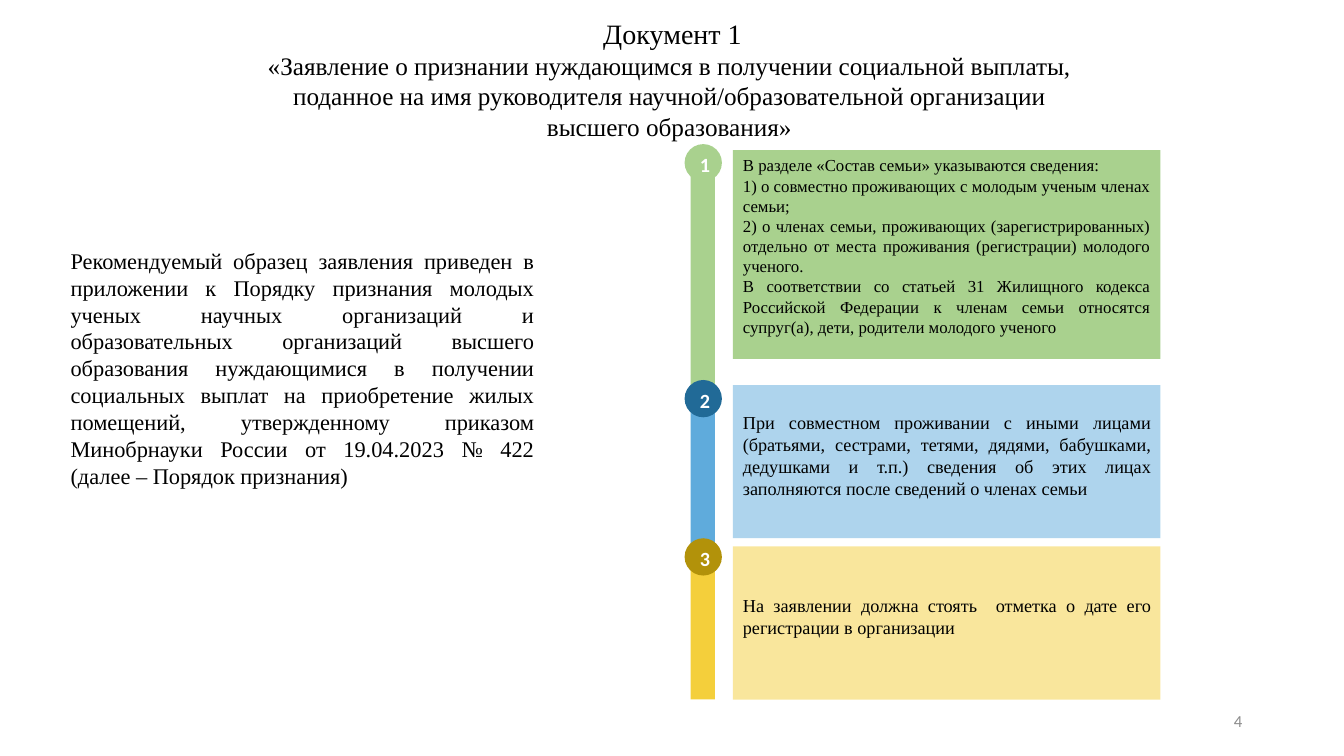
import pptx
import pptx.util
import pptx.dml.color
import pptx.enum.shapes
import pptx.enum.text
import pptx.oxml.ns
import lxml.etree

RGBColor = pptx.dml.color.RGBColor
Shape = pptx.enum.shapes.MSO_SHAPE
Align = pptx.enum.text.PP_ALIGN
Anchor = pptx.enum.text.MSO_ANCHOR
qn = pptx.oxml.ns.qn

BLACK = RGBColor(0x00, 0x00, 0x00)
WHITE = RGBColor(0xFF, 0xFF, 0xFF)
GRAY = RGBColor(0x8C, 0x8C, 0x8C)
GREEN = RGBColor(0xA9, 0xD1, 0x8E)
BLUE = RGBColor(0x5F, 0xAB, 0xDC)
NAVY = RGBColor(0x21, 0x6A, 0x97)
YELLOW = RGBColor(0xF4, 0xCF, 0x3B)
OCHRE = RGBColor(0xB2, 0x92, 0x0A)

SERIF = "Times New Roman"
SANS = "Calibri"
COLUMNS, ROWS = 133.3, 75
CELL = pptx.util.Inches(0.1)
LINE_ROWS = 2.15

TITLE = [
    "Документ 1",
    "«Заявление о признании нуждающимся в получении социальной выплаты, ",
    "поданное на имя руководителя научной/образовательной организации ",
    "высшего образования» ",
]
SAMPLE = [
    "Рекомендуемый образец заявления приведен в приложении к Порядку признания "
    "молодых ученых научных организаций и образовательных организаций высшего "
    "образования нуждающимися в получении социальных выплат на приобретение жилых "
    "помещений, утвержденному приказом Минобрнауки России от 19.04.2023 № 422 "
    "(далее – Порядок признания)"
]
FAMILY = [
    "В разделе «Состав семьи» указываются сведения: ",
    "1) о совместно проживающих с молодым ученым членах семьи;",
    "2) о членах семьи, проживающих (зарегистрированных) отдельно от места "
    "проживания (регистрации) молодого ученого.",
    "В соответствии со статьей 31 Жилищного кодекса Российской Федерации к членам "
    "семьи относятся супруг(а), дети, родители молодого ученого",
]
RELATIVES = [
    "При совместном проживании с иными лицами (братьями, сестрами, тетями, дядями, "
    "бабушками, дедушками и т.п.) сведения об этих лицах заполняются после сведений "
    "о членах семьи"
]
MARK = ["На заявлении должна стоять  отметка о дате его регистрации в организации"]

STAGES = [
    dict(tint=GREEN, badge=GREEN, opacity=100, badge_top=14.3, bar_top=14.9, bar_rows=23.3,
         card_top=14.9, card_rows=20.7, lines=FAMILY, size=12, skipped=0),
    dict(tint=BLUE, badge=NAVY, opacity=50, badge_top=37.7, bar_top=38.2, bar_rows=16.6,
         card_top=38.2, card_rows=15.2, lines=RELATIVES, size=13, skipped=1),
    dict(tint=YELLOW, badge=OCHRE, opacity=50, badge_top=53.4, bar_top=54.1, bar_rows=15.3,
         card_top=54.2, card_rows=15.2, lines=MARK, size=13, skipped=2),
]


def apply(target, values):
    for name, value in values.items():
        setattr(target, name, value)


class Page:
    def __init__(self, deck):
        self.slide = deck.slides.add_slide(deck.slide_layouts[1])
        self.shapes = self.slide.shapes

    def frame(self, columns, rows, width, height):
        lengths = (columns, rows, width, height)
        return [round(CELL * length) for length in lengths]

    def place(self, box, area):
        apply(box, dict(zip(("left", "top", "width", "height"), self.frame(*area))))

    def fill_text(self, box, lines, sizes, align, font=SERIF, color=BLACK,
                  bold=False, anchor=Anchor.TOP, skipped=0):
        text = box.text_frame
        apply(text, dict(word_wrap=True, vertical_anchor=anchor,
                         auto_size=pptx.enum.text.MSO_AUTO_SIZE.NONE,
                         margin_top=round(CELL * (0.5 + skipped * LINE_ROWS))))
        for index, line in enumerate(lines):
            para = text.paragraphs[0] if index == 0 else text.add_paragraph()
            apply(para, dict(alignment=align, space_before=pptx.util.Pt(0)))
            span = para.add_run()
            span.text = line
            size = sizes[min(index, len(sizes) - 1)]
            apply(span.font, dict(name=font, size=pptx.util.Pt(size), bold=bold))
            span.font.color.rgb = color

    def title(self, area, lines, sizes):
        box = self.shapes.title
        self.place(box, area)
        self.fill_text(box, lines, sizes, Align.CENTER, anchor=Anchor.BOTTOM)

    def body(self, area, lines, size):
        box = self.slide.placeholders[1]
        self.place(box, area)
        box.fill.solid()
        box.fill.fore_color.rgb = WHITE
        self.fill_text(box, lines, [size], Align.JUSTIFY)
        for para in box.text_frame.paragraphs:
            settings = para._p.get_or_add_pPr()
            settings.set("marL", "0")
            settings.set("indent", "0")
            lxml.etree.SubElement(settings, qn("a:buNone"))

    def shape(self, kind, area, color, opacity=100):
        box = self.shapes.add_shape(kind, *self.frame(*area))
        box.shadow.inherit = False
        box.fill.solid()
        box.fill.fore_color.rgb = color
        box.line.fill.background()
        if opacity < 100:
            tint = box._element.spPr.find(qn("a:solidFill"))[0]
            lxml.etree.SubElement(tint, qn("a:alpha")).set("val", str(opacity * 1000))
        return box

    def badge(self, area, color, number):
        box = self.shape(Shape.OVAL, area, color)
        self.fill_text(box, [str(number)], [18], Align.CENTER, SANS, WHITE, True, Anchor.MIDDLE)
        span = box.text_frame.paragraphs[0].runs[0]
        span._r.get_or_add_rPr().set("cap", "small")

    def stage(self, number, stage):
        self.shape(Shape.RECTANGLE, (68.5, stage["bar_top"], 2.4, stage["bar_rows"]),
                   stage["tint"])
        card = self.shape(Shape.RECTANGLE, (72.7, stage["card_top"], 42.4, stage["card_rows"]),
                          stage["tint"], stage["opacity"])
        self.fill_text(card, stage["lines"], [stage["size"]], Align.JUSTIFY,
                       skipped=stage["skipped"])
        self.badge((67.9, stage["badge_top"], 3.7, 3.7), stage["badge"], number)

    def number(self, area, value):
        box = self.shapes.add_textbox(*self.frame(*area))
        self.fill_text(box, [str(value)], [12], Align.RIGHT, SANS, GRAY, anchor=Anchor.MIDDLE)


def main():
    deck = pptx.Presentation()
    apply(deck, dict(slide_width=round(CELL * COLUMNS), slide_height=CELL * ROWS))
    page = Page(deck)
    page.title((16.7, 1, 100, 13.5), TITLE, [20, 18])
    page.body((6, 24, 48, 25.2), SAMPLE, 16)
    for number, stage in enumerate(STAGES, 1):
        page.stage(number, stage)
    page.number((94.2, 69.5, 30, 4), 4)
    deck.save("out.pptx")


if __name__ == "__main__":
    main()
